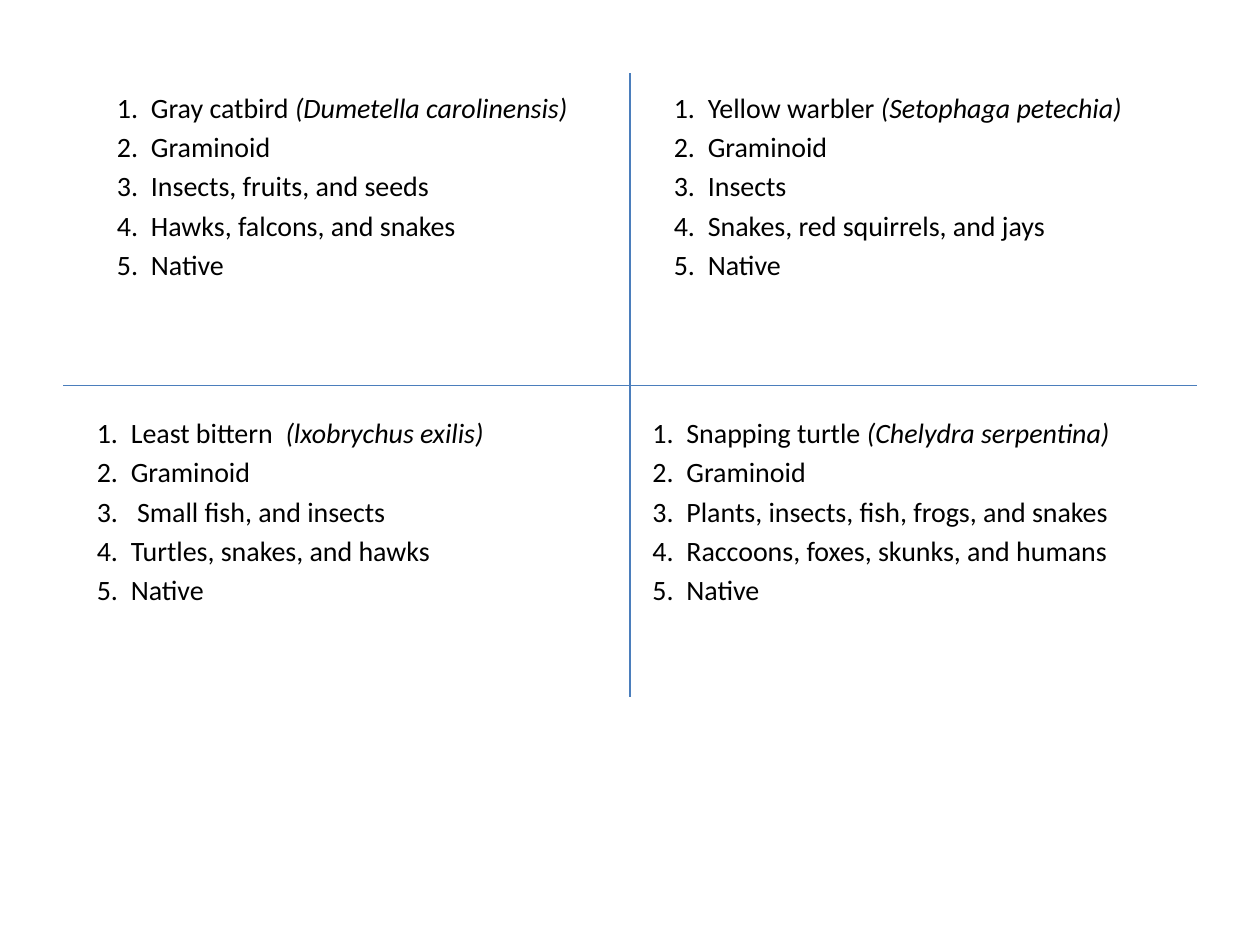
from pptx import Presentation
from pptx.dml.color import RGBColor
from pptx.enum.shapes import MSO_CONNECTOR
from pptx.enum.text import MSO_AUTO_SIZE
from pptx.oxml.ns import qn
from pptx.util import Inches, Pt

STRAIGHT = MSO_CONNECTOR.STRAIGHT
FIT_SHAPE = MSO_AUTO_SIZE.SHAPE_TO_FIT_TEXT
TEXT_COLOR = "000000"
LINE_COLOR = "4B7EBC"
FONT = {"name": "Calibri", "size": Pt(16)}
FRAME = {"word_wrap": True, "auto_size": FIT_SHAPE}
NUMBER_INDENT = Inches(0.27)

DIVIDERS = [(5, 0.58, 5, 5.53), (0.5, 3.06, 9.5, 3.06)]
SPECIES = [
    (0.83, 0.67, "Gray catbird ", "(Dumetella carolinensis)",
     ["Graminoid", "Insects, fruits, and seeds", "Hawks, falcons, and snakes", "Native"]),
    (5.25, 0.67, "Yellow warbler ", "(Setophaga petechia)",
     ["Graminoid", "Insects", "Snakes, red squirrels, and jays", "Native"]),
    (0.67, 3.25, "Least bittern  ", "(lxobrychus exilis)",
     ["Graminoid", " Small fish, and insects", "Turtles, snakes, and hawks", "Native"]),
    (5.08, 3.25, "Snapping turtle ", "(Chelydra serpentina)",
     ["Graminoid", "Plants, insects, fish, frogs, and snakes",
      "Raccoons, foxes, skunks, and humans", "Native"]),
]


def rgb(value):
    """Return the colour for a hex string."""
    return RGBColor.from_string(value)


def set_attrs(obj, values):
    """Set every attribute in a dict of format values."""
    for name, value in values.items():
        setattr(obj, name, value)


def add_divider(s, ends):
    """Draw a thin straight line without a shadow."""
    line = s.shapes.add_connector(STRAIGHT, *map(Inches, ends))
    line.line.color.rgb = rgb(LINE_COLOR)
    line.line.width = Pt(0.75)
    sp_pr = line._element.spPr
    sp_pr.append(sp_pr.makeelement(qn("a:effectLst"), {}))


def add_run(p, text, italic=False):
    """Append a formatted run to a paragraph."""
    r = p.add_run()
    r.text = text
    set_attrs(r.font, {**FONT, "italic": italic})
    r.font.color.rgb = rgb(TEXT_COLOR)


def add_species(s, left, top, name, latin, facts):
    """Add a numbered list about one species."""
    box = s.shapes.add_textbox(Inches(left), Inches(top), Inches(3.9), Inches(1.66))
    tf = box.text_frame
    set_attrs(tf, FRAME)
    for number, text in enumerate([name, *facts], 1):
        p = tf.paragraphs[0] if number == 1 else tf.add_paragraph()
        p.space_before = Pt(3.2)
        p_pr = p._p.get_or_add_pPr()
        p_pr.set("marL", str(NUMBER_INDENT))
        p_pr.set("indent", str(-NUMBER_INDENT))
        add_run(p, f"{number}.\t{text}")
        if number == 1:
            add_run(p, latin, italic=True)


def main():
    """Build the slide of four species and save it."""
    prs = Presentation()
    set_attrs(prs, {"slide_width": Inches(10), "slide_height": Inches(7.5)})
    s = prs.slides.add_slide(prs.slide_layouts[6])
    for ends in DIVIDERS:
        add_divider(s, ends)
    for species in SPECIES:
        add_species(s, *species)
    prs.save("out.pptx")


if __name__ == "__main__":
    main()
